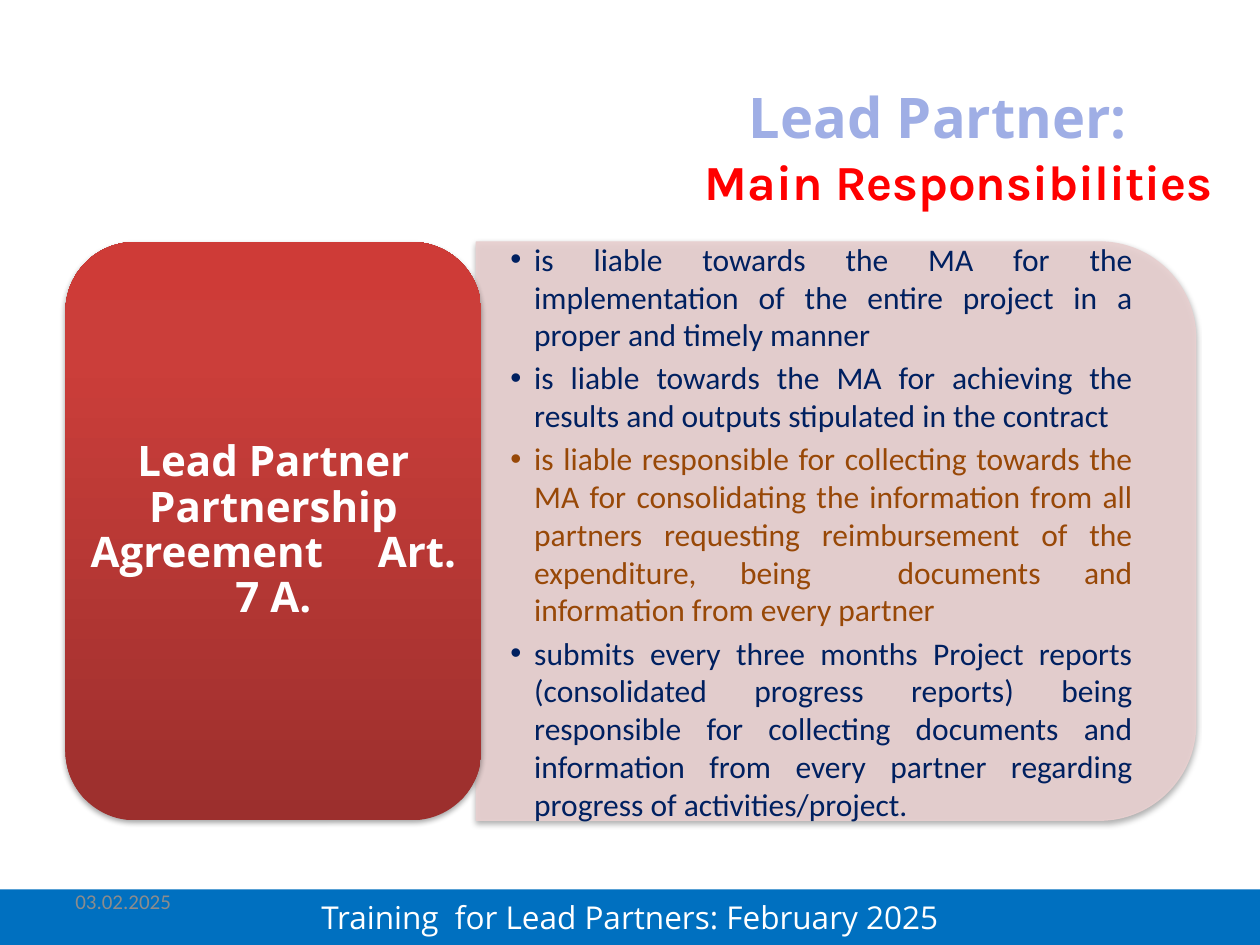
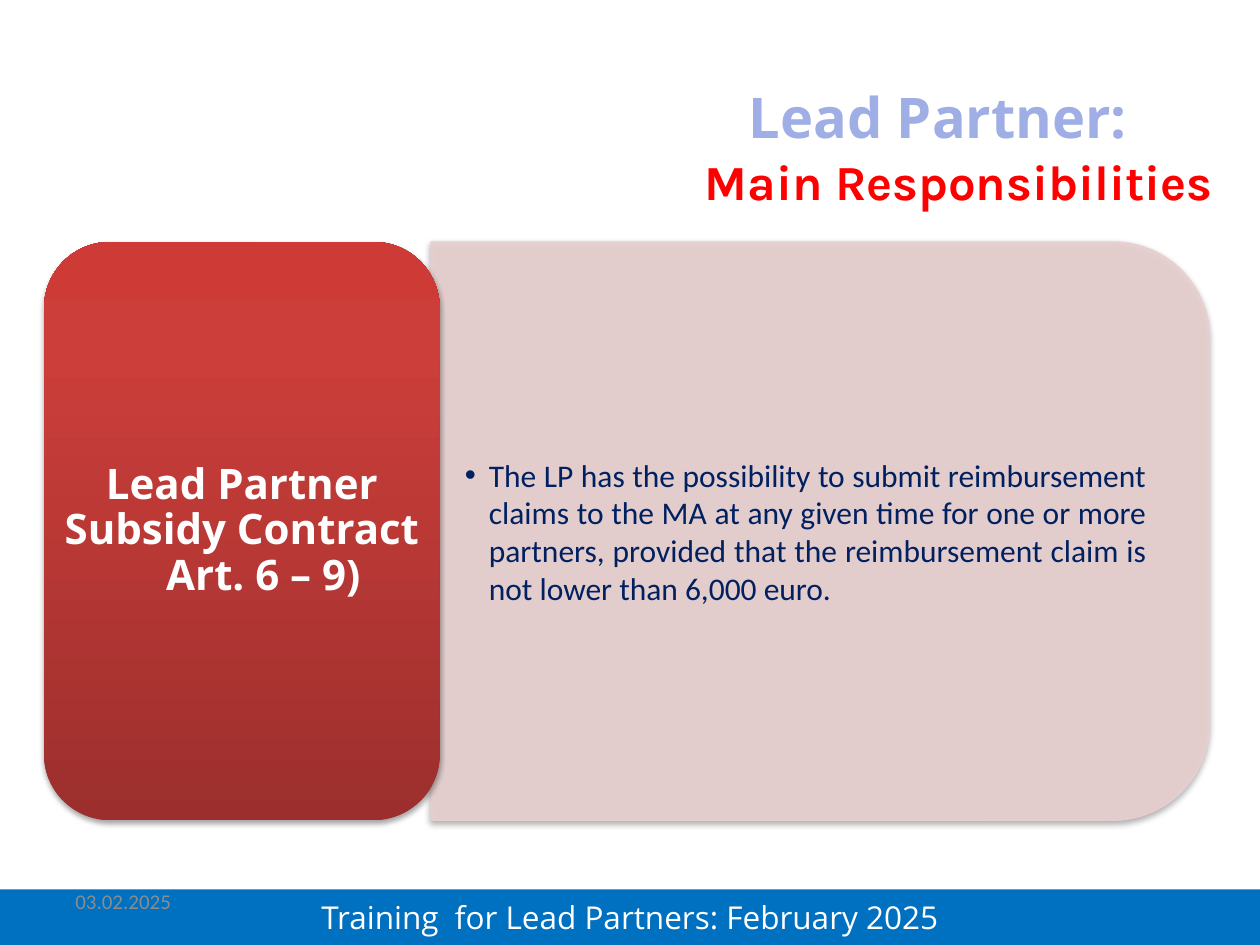
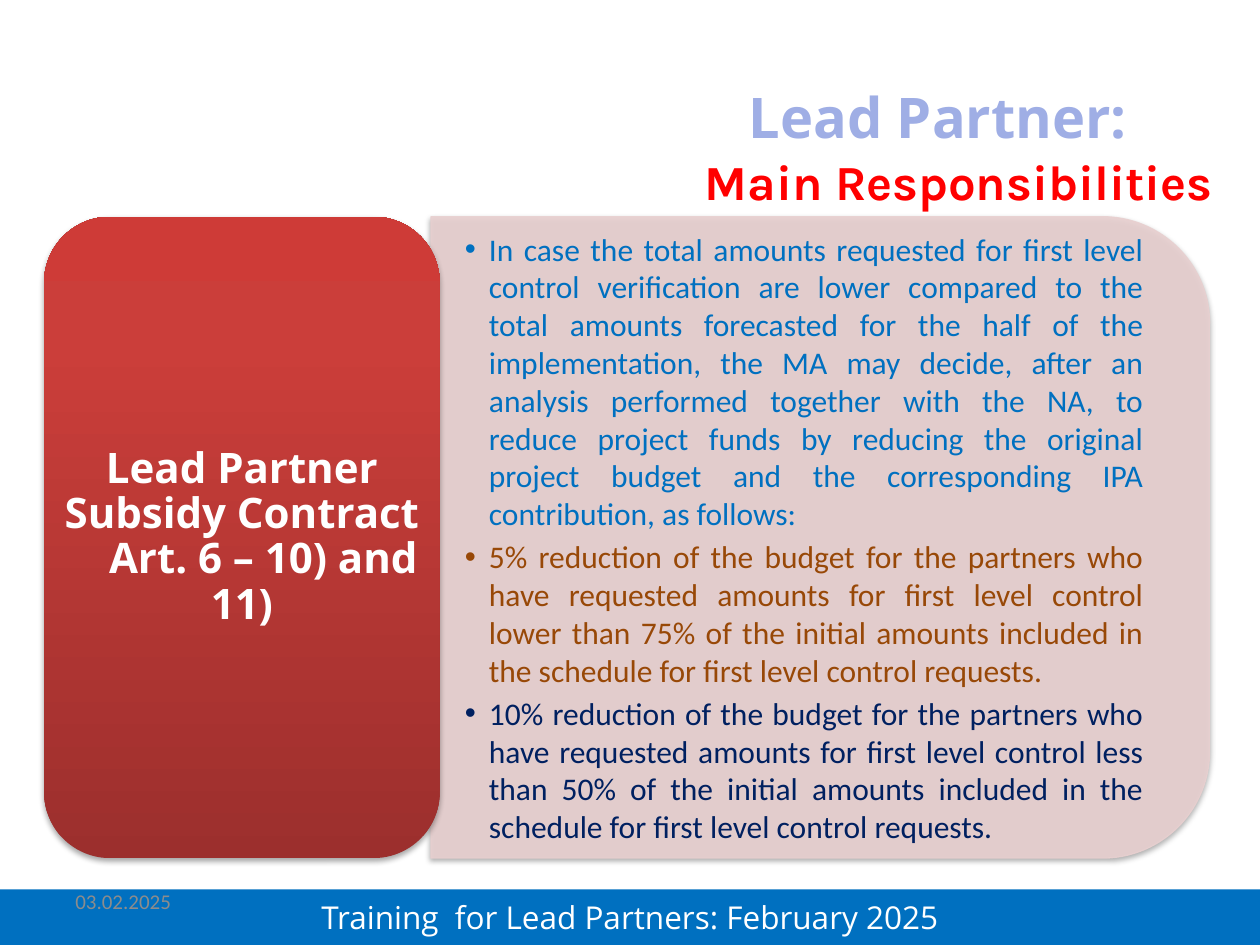
from copy import deepcopy
from lxml import etree
from pptx import Presentation, util as u
from pptx.dml.color import RGBColor
from pptx.enum import shapes, text
from pptx.oxml import ns

HUES = {"band": "0070C0", "white": "FFFFFF", "title": "9FAEE5", "red": "FF0000",
        "panel": "E8D0D0", "navy": "002060", "brown": "984807", "blue": "0070C0",
        "date": "8C8C8C", "low": "9C2F2D", "mid": "CB3E3A", "high": "CE3B37"}
KIND, SIDE, MID = shapes.MSO_SHAPE, text.PP_ALIGN, text.MSO_ANCHOR.MIDDLE
WIDE, TALL = 10, 7.5
SHADE = ('<a:effectLst xmlns:a="%s"><a:outerShdw blurRad="40000" dist="23000" dir="5400000" '
         'rotWithShape="0"><a:srgbClr val="000000"><a:alpha val="35000"/></a:srgbClr>'
         '</a:outerShdw></a:effectLst>' % ns.namespaces("a")["a"])

# Each head line is (text, first-line indent); a tab marks the wide gap.
# Each panel is (left, top, width, height), each card (left, width).
PAGES = [
    {"card": (0.52, 3.3), "panel": (3.78, 1.92, 5.71, 4.59),
     "head": [("Lead Partner Partnership Agreement\tArt. 7 A.", 0)],
     "body": [
         ("navy", "is liable towards the MA for the implementation of the entire project in a proper and timely manner"),
         ("navy", "is liable towards the MA for achieving the results and outputs stipulated in the contract"),
         ("brown", "is liable responsible for collecting towards the MA for consolidating the information from all "
                   "partners requesting reimbursement of the expenditure, being  documents and information from every partner"),
         ("navy", "submits every three months Project reports (consolidated progress reports) being responsible for "
                  "collecting documents and information from every partner regarding progress of activities/project.")]},
    {"card": (0.35, 3.14), "panel": (3.42, 1.92, 6.18, 4.59),
     "head": [("Lead Partner Subsidy Contract", 0), ("Art. 6 – 9)", 0.34)],
     "body": [
         ("navy", "The LP has the possibility to submit reimbursement claims to the MA at any given time for one or "
                  "more partners, provided that the reimbursement claim is not lower than 6,000 euro.")]},
    {"card": (0.35, 3.14), "panel": (3.42, 1.72, 6.18, 5.09),
     "head": [("Lead Partner Subsidy Contract", 0), ("Art. 6 – 10) and 11)", 0.34)],
     "body": [
         ("blue", "In case the total amounts requested for first level control verification are lower compared to the "
                  "total amounts forecasted for the half of the implementation, the MA may decide, after an analysis "
                  "performed together with the NA, to reduce project funds by reducing the original project budget "
                  "and the corresponding IPA contribution, as follows:"),
         ("brown", "5% reduction of the budget for the partners who have requested amounts for first level control "
                   "lower than 75% of the initial amounts included in the schedule for first level control requests."),
         ("navy", "10% reduction of the budget for the partners who have requested amounts for first level control "
                  "less than 50% of the initial amounts included in the schedule for first level control requests.")]},
]


def shape(page, kind, *at):
    item = page.shapes.add_shape(kind, *map(u.Inches, at))
    item.shadow.inherit = False
    item.line.fill.background()
    return item


def write(frame, lines, face, size, side, bold=False, pad=(0.1, 0.05)):
    """Fill a frame with (hue, text) lines and return its paragraphs."""
    frame.word_wrap = True
    frame.margin_left = frame.margin_right = u.Inches(pad[0])
    frame.margin_top = frame.margin_bottom = u.Inches(pad[1])
    for i, (hue, line) in enumerate(lines):
        para = frame.add_paragraph() if i else frame.paragraphs[0]
        para.alignment = side
        for j, part in enumerate(line.split("\t")):
            for word in ([" ", part] if j else [part]):
                run = para.add_run()
                run.text = word
                font = run.font
                font.name, font.size, font.bold = face, u.Pt(size), bold
                font.color.rgb = RGBColor.from_string(HUES[hue])
                if word == " ":
                    font._element.set("spc", "2500")
    return frame.paragraphs


deck = Presentation()
deck.slide_width, deck.slide_height = u.Inches(WIDE), u.Inches(TALL)

for data in PAGES:
    page = deck.slides.add_slide(deck.slide_layouts[6])

    band = shape(page, KIND.RECTANGLE, 0, 7.06, WIDE, 0.44)
    band.fill.solid()
    band.fill.fore_color.rgb = RGBColor.from_string(HUES["band"])
    band.text_frame.vertical_anchor = MID
    write(band.text_frame, [("white", "Training  for Lead Partners: February 2025")],
          "Open Sans", 18, SIDE.CENTER)

    x, y, w, h = data["panel"]
    left, span = data["card"]
    rim, edge = 0.05 * h, 0.05 * span

    # The panel is a tall shape turned a quarter about its centre.
    panel = shape(page, KIND.ROUND_2_SAME_RECTANGLE, x + (w - h) / 2, y + (h - w) / 2, h, w)
    panel.rotation = 90
    panel.line.width = u.Pt(0.75)
    for fill in (panel.fill, panel.line.fill):
        fill.solid()
        fill.fore_color.rgb = RGBColor.from_string(HUES["panel"])
    for tint in panel._element.spPr.iter(ns.qn("a:srgbClr")):
        etree.SubElement(tint, ns.qn("a:alpha")).set("val", "90000")

    card = shape(page, KIND.ROUNDED_RECTANGLE, left, y, span, h)
    card.fill.gradient()
    card.fill.gradient_angle = 90
    stops = card._element.spPr.find(".//" + ns.qn("a:gsLst"))
    stops.append(deepcopy(stops[0]))
    for stop, spot, hue in zip(card.fill.gradient_stops, (0, 0.8, 1), ("low", "mid", "high")):
        stop.position = spot
        stop.color.rgb = RGBColor.from_string(HUES[hue])

    for item in (panel, card):
        props = item._element.spPr
        props.replace(props.find(ns.qn("a:effectLst")), etree.fromstring(SHADE))

    # Frame, lines, face, size, side, bold, padding, anchored in the middle
    boxes = [
        ((5.16, 0.54, 4.57, 0.77), [("title", "Lead Partner:")],
         "Open Sans", 32, SIDE.CENTER, True, (0.1, 0.05), True),
        ((4.37, 1.15, 5.35, 0.57), [("red", "Main Responsibilities")],
         "Karla", 28, SIDE.RIGHT, True, (0.1, 0.05), False),
        ((x, y + rim, w - rim, h - 2 * rim), data["body"],
         "Calibri", 18, SIDE.JUSTIFY, False, (0.27, 0.14), True),
        ((left + edge, y + edge, span - 2 * edge, h - 2 * edge),
         [("white", line) for line, _ in data["head"]],
         "Open Sans", 24, SIDE.CENTER, True, (0, 0), True),
        ((0.5, 6.95, 2.33, 0.4), [("date", "03.02.2025")],
         "Calibri", 12, SIDE.LEFT, False, (0.1, 0.05), True),
    ]
    made = []
    for at, lines, face, size, side, bold, pad, mid in boxes:
        frame = page.shapes.add_textbox(*map(u.Inches, at)).text_frame
        if mid:
            frame.vertical_anchor = MID
        made.append(write(frame, lines, face, size, side, bold, pad))

    for para in made[2]:
        para.space_after = u.Pt(3)
        rule = para._p.get_or_add_pPr()
        rule.set("marL", str(u.Inches(0.19)))
        rule.set("indent", str(-u.Inches(0.19)))
        etree.SubElement(rule, ns.qn("a:buFont")).set("typeface", "Arial")
        etree.SubElement(rule, ns.qn("a:buChar")).set("char", "•")
    for para, (_, shift) in zip(made[3], data["head"]):
        para.line_spacing = 0.9
        para._p.get_or_add_pPr().set("indent", str(u.Inches(shift)))

deck.save("out.pptx")
